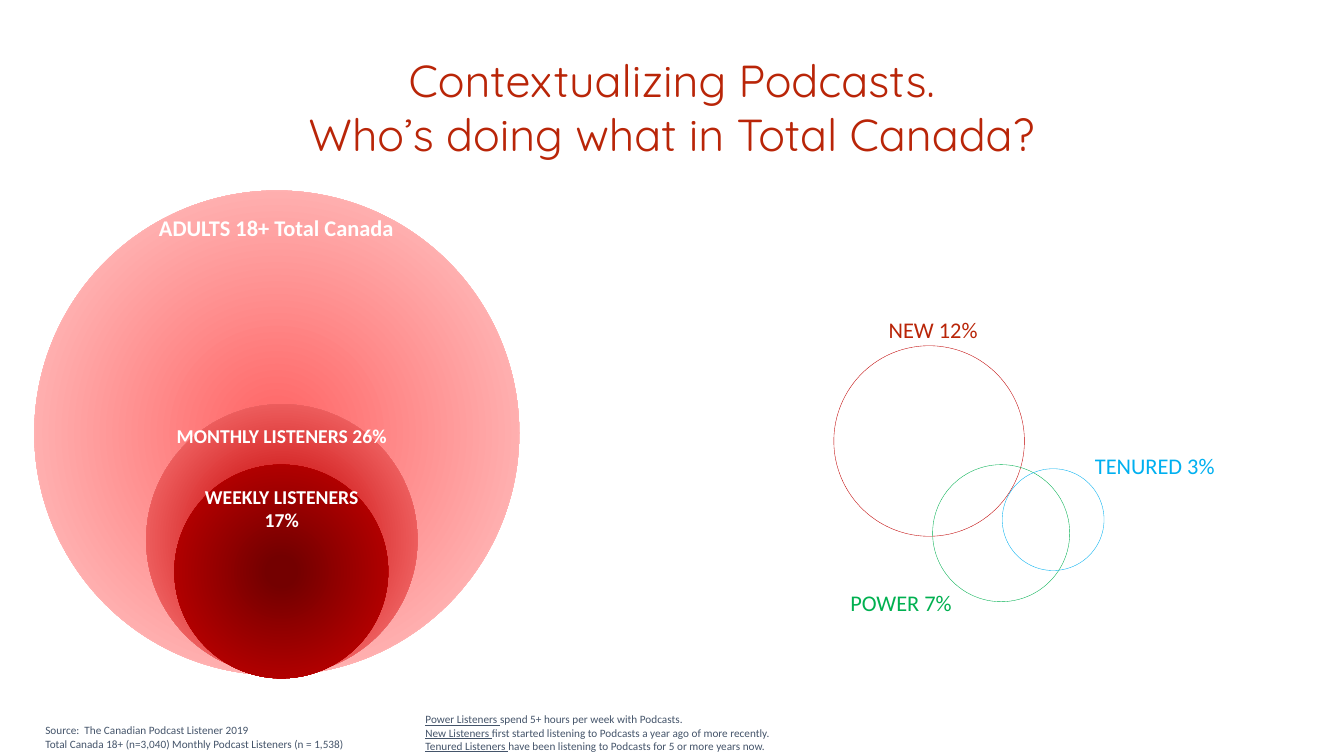
import pptx
import pptx.dml.color
import pptx.enum.shapes
import pptx.enum.text
import pptx.oxml
import pptx.util
from pptx.util import Inches

ALIGN = pptx.enum.text.PP_ALIGN
SHAPES = pptx.enum.shapes.MSO_SHAPE

THEME = {
    "body_font": "Calibri", "title_font": "Quicksand",
    "title_size": 32, "label_size": 16, "inner_size": 14, "note_size": 8,
    "title": "B92508", "note": "44546A", "white": "FFFFFF",
    "red": "C00000", "green": "00B050", "blue": "00B0F0",
    "adults": ("FF6D6D", "FFCDCD"),
    "monthly": ("C40000", "FF8585"),
    "weekly": ("740000", "CC0000"),
}

# Text, (left, top, width, height)
TITLE_LINES = [
    ("Contextualizing Podcasts.", (3.78, 0.47, 5.77, 0.64)),
    ("Who’s doing what in Total Canada?", (2.64, 1.01, 8.05, 0.64)),
]

# Each note is a list of paragraphs; each paragraph is (underlined term, rest)
NOTES = [
    ((0.45, 7.18, 3.1, 0.27), [
        ("", "Source:  The Canadian Podcast Listener 2019"),
        ("", "Total Canada 18+ (n=3,040) Monthly Podcast Listeners (n = 1,538)"),
    ]),
    ((4.22, 7.07, 3.6, 0.4), [
        ("Power Listeners ", "spend 5+ hours per week with Podcasts."),
        ("New Listeners ", "first started listening to Podcasts a year ago of more recently."),
        ("Tenured Listeners ", "have been listening to Podcasts for 5 or more years now."),
    ]),
]

# Gradient, circle (left, top, diameter), label, label place, label size
AUDIENCES = [
    ("adults", (0.34, 1.89, 4.81), "ADULTS 18+ Total Canada",
     (1.45, 2.12, 2.58, 1.3), "label_size"),
    ("monthly", (1.45, 4.01, 2.69), "MONTHLY LISTENERS 26%",
     (1.6, 4.21, 2.39, 2.18), "inner_size"),
    ("weekly", (1.73, 4.61, 2.12), "WEEKLY LISTENERS 17%",
     (1.98, 4.81, 1.63, 1.51), "inner_size"),
]

# Ring colour, circle, label, label (left, top), label colour, alignment
SEGMENTS = [
    ("red", (8.27, 3.43, 1.89), "NEW 12%", (8.39, 3.14), "title", ALIGN.CENTER),
    ("green", (9.25, 4.61, 1.36), "POWER 7%", (7.71, 5.84), "green", ALIGN.RIGHT),
    ("blue", (9.94, 4.65, 1.01), "TENURED 3%", (10.86, 4.49), "blue", ALIGN.LEFT),
]
SEGMENT_LABEL_SIZE = (1.73, 0.27)


def color(key):
    return pptx.dml.color.RGBColor.from_string(THEME[key])


def add_span(para, text, size, tint, font="body_font", bold=False, underline=False):
    span = para.add_run()
    span.text = text
    span.font.name = THEME[font]
    span.font.size = pptx.util.Pt(THEME[size])
    span.font.color.rgb = color(tint)
    span.font.bold = bold
    span.font.underline = underline


def set_frame(frame, wrap=True):
    """Remove the margins and anchor the text at the top."""
    frame.margin_left = frame.margin_right = 0
    frame.margin_top = frame.margin_bottom = 0
    frame.vertical_anchor = pptx.enum.text.MSO_ANCHOR.TOP
    frame.word_wrap = wrap


def add_box(page, place):
    box = page.shapes.add_textbox(*map(Inches, place))
    set_frame(box.text_frame)
    return box.text_frame


def add_circle(page, circle):
    left, top, diameter = map(Inches, circle)
    shape = page.shapes.add_shape(SHAPES.OVAL, left, top, diameter, diameter)
    shape.shadow.inherit = False
    return shape


def fill_radial(shape, colors):
    """Gradient running from the centre of the shape to its edge."""
    shape.fill.gradient()
    for stop, position, value in zip(shape.fill.gradient_stops, (0.09, 0.98), colors):
        stop.position = position
        stop.color.rgb = pptx.dml.color.RGBColor.from_string(value)
    radial = pptx.oxml.parse_xml(
        '<a:path xmlns:a="http://schemas.openxmlformats.org/drawingml/2006/main" path="circle">'
        '<a:fillToRect l="50000" t="50000" r="50000" b="50000"/></a:path>')
    linear = shape.element.spPr.find(".//" + pptx.oxml.ns.qn("a:lin"))
    linear.getparent().replace(linear, radial)


def add_titles(page):
    for text, place in TITLE_LINES:
        box = page.shapes.add_textbox(*map(Inches, place))
        box.text_frame.word_wrap = False
        para = box.text_frame.paragraphs[0]
        para.alignment = ALIGN.CENTER
        add_span(para, text, "title_size", "title", "title_font")


def add_notes(page):
    for place, lines in NOTES:
        frame = add_box(page, place)
        for index, (term, rest) in enumerate(lines):
            para = frame.add_paragraph() if index else frame.paragraphs[0]
            if term:
                add_span(para, term, "note_size", "note", underline=True)
            add_span(para, rest, "note_size", "note")


def add_audiences(page):
    for gradient, circle, label, place, size in AUDIENCES:
        shape = add_circle(page, circle)
        fill_radial(shape, THEME[gradient])
        shape.line.fill.background()
        para = add_box(page, place).paragraphs[0]
        para.alignment = ALIGN.CENTER
        add_span(para, label, size, "white", bold=True)


def add_segments(page):
    for ring, circle, label, corner, tint, alignment in SEGMENTS:
        shape = add_circle(page, circle)
        shape.fill.background()
        shape.line.color.rgb = color(ring)
        shape.line.width = pptx.util.Pt(0.25)

        plate = page.shapes.add_shape(
            SHAPES.RECTANGLE, *map(Inches, corner + SEGMENT_LABEL_SIZE))
        plate.shadow.inherit = False
        plate.fill.solid()
        plate.fill.fore_color.rgb = color("white")
        plate.line.fill.background()
        set_frame(plate.text_frame)
        para = plate.text_frame.paragraphs[0]
        para.alignment = alignment
        add_span(para, label, "label_size", tint)


def main():
    deck = pptx.Presentation()
    deck.slide_width, deck.slide_height = Inches(13.33), Inches(7.5)
    page = deck.slides.add_slide(deck.slide_layouts[6])
    add_titles(page)
    add_notes(page)
    add_audiences(page)
    add_segments(page)
    deck.save("out.pptx")


if __name__ == "__main__":
    main()
